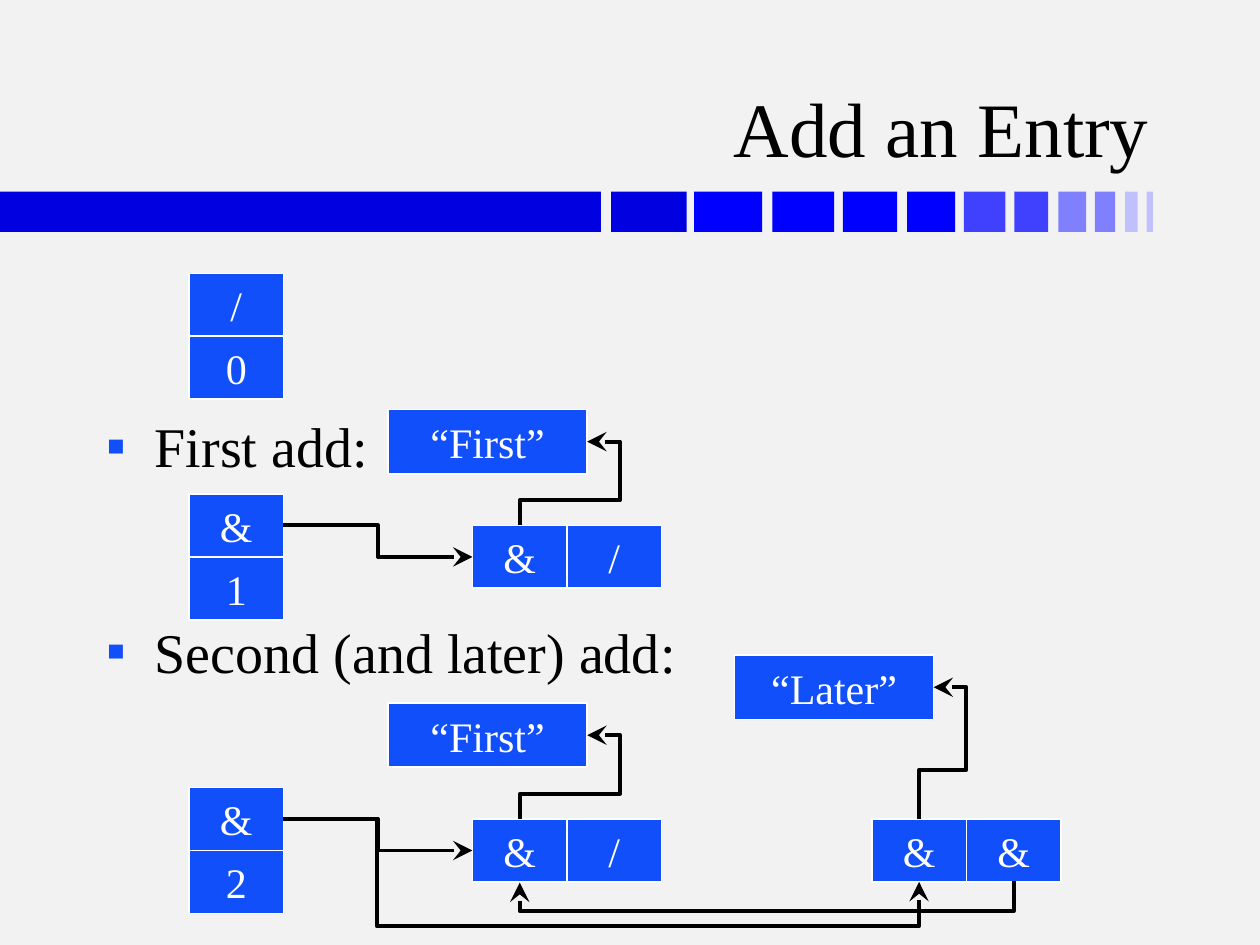
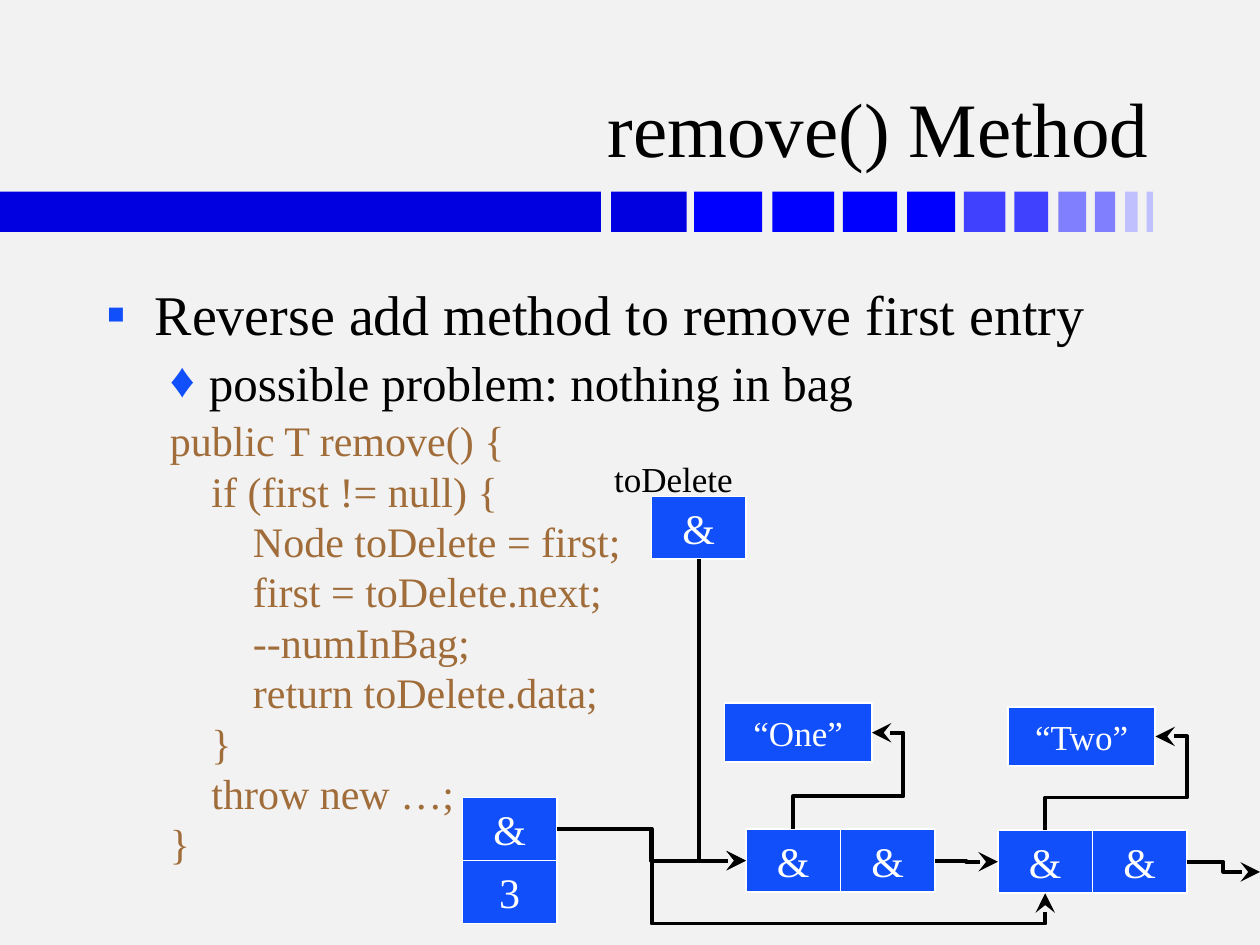
import pptx
import pptx.dml.color
import pptx.enum.shapes
import pptx.enum.text
import pptx.oxml
import pptx.oxml.ns
import pptx.util
from pptx.dml.color import RGBColor
from pptx.util import Inches, Pt

FONT = "Times New Roman"
PAPER = RGBColor(0xF2, 0xF2, 0xF2)
BLACK = RGBColor(0, 0, 0)
WHITE = RGBColor(255, 255, 255)
NODE_BLUE = RGBColor(0x11, 0x4F, 0xFB)
CODE_BROWN = RGBColor(0xA0, 0x6D, 0x3A)
BAND_DARK = RGBColor(0, 0, 0xE0)
BAND_BLUE = RGBColor(0, 0, 0xFF)
BAND_MID = RGBColor(0x40, 0x40, 0xFF)
BAND_LIGHT = RGBColor(0x80, 0x80, 0xFF)
BAND_PALE = RGBColor(0xC0, 0xC0, 0xFF)

BAND_TOP, BAND_HEIGHT = 1.52, 0.32
BANDS = [
    (0, 4.77, BAND_DARK), (4.85, 0.6, BAND_DARK),
    (5.51, 0.54, BAND_BLUE), (6.13, 0.49, BAND_BLUE),
    (6.69, 0.43, BAND_BLUE), (7.2, 0.38, BAND_BLUE),
    (7.65, 0.33, BAND_MID), (8.05, 0.27, BAND_MID),
    (8.4, 0.22, BAND_LIGHT), (8.69, 0.16, BAND_LIGHT),
    (8.93, 0.1, BAND_PALE), (9.1, 0.05, BAND_PALE),
]

CELL_W, CELL_H = 0.75, 0.5
TOP, LEFT, BOTTOM, RIGHT = range(4)

STYLES = {
    "bullet": dict(size=32, color=BLACK, margin=0.38, hang=0.38, before=6.4, after=0, mark="▪"),
    "sub": dict(size=28, color=BLACK, margin=0.81, hang=0.31, before=3, after=2.2, mark="♦"),
    "code": dict(size=24, color=CODE_BROWN, margin=0.5, hang=0, before=0, after=0, mark=None),
}
CODE_STEP = 0.33

ADD = {
    "title": "Add an Entry",
    "texts": [
        (3.22, 0.7, [("bullet", 0, "First add:")]),
        (4.85, 0.7, [("bullet", 0, "Second (and later) add:")]),
    ],
    "stacks": {
        "empty": (1.5, 2.17, "/0"),
        "bag1": (1.5, 3.92, "&1"),
        "bag2": (1.5, 6.25, "&2"),
    },
    "nodes": {
        "node1": (3.75, 4.17, "&/"),
        "node2": (3.75, 6.5, "&/"),
        "later node": (6.92, 6.5, "&&"),
    },
    "data": {
        "first1": (3.08, 3.25, 1.58, 0.51, "“First”", 24),
        "first2": (3.08, 5.58, 1.58, 0.51, "“First”", 24),
        "later": (5.83, 5.2, 1.58, 0.51, "“Later”", 24),
    },
    "arrows": [
        (("node1", 0), TOP, ("first1", 0), RIGHT, [3.97, 4.92]),
        (("bag1", 0), RIGHT, ("node1", 0), LEFT, [3]),
        (("bag2", 0), RIGHT, ("node2", 0), LEFT, [3]),
        (("node2", 0), TOP, ("first2", 0), RIGHT, [6.3, 4.92]),
        (("later node", 0), TOP, ("later", 0), RIGHT, [6.11, 7.67]),
        (("later node", 1), BOTTOM, ("node2", 0), BOTTOM, [7.24]),
        (("bag2", 0), RIGHT, ("later node", 0), BOTTOM, [2.99, 7.35]),
    ],
}

REMOVE = {
    "title": "remove() Method",
    "texts": [
        (2.17, 4.5, [
            ("bullet", 0, "Reverse add method to remove first entry"),
            ("sub", 0, "possible problem: nothing in bag"),
            ("code", 0, "public T remove() {"),
            ("code", 1, "if (first != null) {"),
            ("code", 2, "Node toDelete = first;"),
            ("code", 2, "first = toDelete.next;"),
            ("code", 2, "--numInBag;"),
            ("code", 2, "return toDelete.data;"),
            ("code", 1, "}"),
            ("code", 1, "throw new …;"),
            ("code", 0, "}"),
        ]),
    ],
    "stacks": {"bag": (3.67, 6.33, "&3"), "toDelete": (5.17, 3.94, "&")},
    "nodes": {"node1": (5.92, 6.58, "&&"), "node2": (7.92, 6.59, "&&")},
    "data": {
        "one": (5.75, 5.58, 1.17, 0.47, "“One”", 20),
        "two": (8, 5.61, 1.17, 0.47, "“Two”", 20),
    },
    "arrows": [
        (("bag", 0), RIGHT, ("node1", 0), LEFT, [5.17]),
        (("node1", 0), TOP, ("one", 0), RIGHT, [6.32, 7.17]),
        (("node2", 0), TOP, ("two", 0), RIGHT, [6.33, 9.42]),
        (("node1", 1), RIGHT, ("node2", 0), LEFT, [7.67]),
        (("node2", 1), RIGHT, (10, 6.92), None, [9.71]),
        (("toDelete", 0), BOTTOM, ("node1", 0), LEFT, []),
        (("bag", 0), RIGHT, ("node2", 0), BOTTOM, [5.17, 7.33]),
    ],
}
LABEL = (4.77, 3.58, 1.15, 0.44, "toDelete")


def sub(parent, tag, **attrs):
    el = parent.makeelement(pptx.oxml.ns.qn(tag), attrs)
    parent.append(el)
    return el


def format_runs(p, size, color):
    for r in p.runs:
        r.font.name = FONT
        r.font.size = Pt(size)
        r.font.color.rgb = color


def add_rect(s, x, y, w, h, color):
    sp = s.shapes.add_shape(pptx.enum.shapes.MSO_SHAPE.RECTANGLE,
                            Inches(x), Inches(y), Inches(w), Inches(h))
    sp.shadow.inherit = False
    sp.fill.solid()
    sp.fill.fore_color.rgb = color
    sp.line.fill.background()
    return sp


def add_box(s, x, y, w, h, text, size=24):
    sp = add_rect(s, x, y, w, h, NODE_BLUE)
    sp.line.color.rgb = WHITE
    sp.line.width = Pt(1)
    tf = sp.text_frame
    tf.text = text
    tf.word_wrap = False
    tf.vertical_anchor = pptx.enum.text.MSO_ANCHOR.MIDDLE
    p = tf.paragraphs[0]
    p.alignment = pptx.enum.text.PP_ALIGN.CENTER
    format_runs(p, size, WHITE)
    return sp


def add_text(s, top, height, lines):
    sp = s.shapes.add_textbox(Inches(0.75), Inches(top), Inches(8.5), Inches(height))
    tf = sp.text_frame
    tf.word_wrap = True
    for i, (kind, depth, text) in enumerate(lines):
        style = STYLES[kind]
        p = tf.add_paragraph() if i else tf.paragraphs[0]
        p.text = text
        p.space_before = Pt(style["before"])
        p.space_after = Pt(style["after"])
        format_runs(p, style["size"], style["color"])
        pPr = p._p.get_or_add_pPr()
        pPr.set("marL", str(Inches(style["margin"] + depth * CODE_STEP)))
        pPr.set("indent", str(-Inches(style["hang"])))
        if style["mark"]:
            sub(sub(pPr, "a:buClr"), "a:srgbClr", val=str(NODE_BLUE))
            sub(pPr, "a:buFont", typeface=FONT)
            sub(pPr, "a:buChar", char=style["mark"])
        else:
            sub(pPr, "a:buNone")


def site_point(sp, site):
    fx, fy = {TOP: (0.5, 0), LEFT: (0, 0.5), BOTTOM: (0.5, 1), RIGHT: (1, 0.5)}[site]
    return sp.left + sp.width * fx, sp.top + sp.height * fy


def add_arrow(s, boxes, source, source_site, target, target_site, bends):
    start = boxes[source]
    x1, y1 = site_point(start, source_site)
    if target_site is None:
        x2, y2 = (Inches(v) for v in target)
    else:
        x2, y2 = site_point(boxes[target], target_site)
    cx = s.shapes.add_connector(pptx.enum.shapes.MSO_CONNECTOR.ELBOW,
                                int(x1), int(y1), int(x2), int(y2))
    cx.begin_connect(start, source_site)
    if target_site is not None:
        cx.end_connect(boxes[target], target_site)

    vertical = source_site in (TOP, BOTTOM)
    along, across = (y2 - y1, x1 - x2) if vertical else (x2 - x1, y2 - y1)
    along = along or Inches(0.01)
    cx.width, cx.height = int(abs(along)), int(abs(across))
    cx.left = int((x1 + x2 - cx.width) / 2)
    cx.top = int((y1 + y2 - cx.height) / 2)
    xfrm = cx._element.spPr.xfrm
    xfrm.rot = 90 if vertical else 0
    xfrm.flipH, xfrm.flipV = along < 0, across < 0

    origins = (y1, x1) if vertical else (x1, y1)
    spans = (along, -across if vertical else across)
    geom = cx._element.spPr.find(pptx.oxml.ns.qn("a:prstGeom"))
    geom.set("prst", f"bentConnector{len(bends) + 2}")
    guides = geom.find(pptx.oxml.ns.qn("a:avLst"))
    if guides is None:
        guides = sub(geom, "a:avLst")
    for i, (bend, origin, span) in enumerate(zip(bends, origins, spans), 1):
        ratio = round((Inches(bend) - origin) / span * 100000)
        sub(guides, "a:gd", name=f"adj{i}", fmla=f"val {ratio}")

    cx.line.color.rgb = BLACK
    cx.line.width = Pt(2.25)
    sub(cx.line._get_or_add_ln(), "a:tailEnd", type="stealth", w="lg", len="lg")
    sub(cx._element.spPr, "a:effectLst")


def add_slide(prs, content):
    s = prs.slides.add_slide(prs.slide_layouts[5])
    for x, w, color in BANDS:
        add_rect(s, x, BAND_TOP, w, BAND_HEIGHT, color)
    title = s.shapes.title
    title.left, title.top, title.width, title.height = (
        Inches(v) for v in (0.74, 0.19, 8.48, 1.23))
    tf = title.text_frame
    tf.text = content["title"]
    tf.vertical_anchor = pptx.enum.text.MSO_ANCHOR.BOTTOM
    tf.paragraphs[0].alignment = pptx.enum.text.PP_ALIGN.RIGHT
    format_runs(tf.paragraphs[0], 44, BLACK)
    for text in content["texts"]:
        add_text(s, *text)

    boxes = {}
    for group, dx, dy in (("stacks", 0, CELL_H), ("nodes", CELL_W, 0)):
        for name, (x, y, cells) in content[group].items():
            for i, cell in enumerate(cells):
                boxes[name, i] = add_box(s, x + i * dx, y + i * dy, CELL_W, CELL_H, cell)
    for name, box in content["data"].items():
        boxes[name, 0] = add_box(s, *box)
    for arrow in content["arrows"]:
        add_arrow(s, boxes, *arrow)
    return s


def add_label(s, x, y, w, h, text):
    tf = s.shapes.add_textbox(Inches(x), Inches(y), Inches(w), Inches(h)).text_frame
    tf.text = text
    tf.word_wrap = False
    tf.paragraphs[0].alignment = pptx.enum.text.PP_ALIGN.CENTER
    format_runs(tf.paragraphs[0], 20, BLACK)


def main():
    prs = pptx.Presentation()
    prs.slide_width, prs.slide_height = Inches(10), Inches(7.5)
    fill = prs.slide_master.background.fill
    fill.solid()
    fill.fore_color.rgb = PAPER
    add_slide(prs, ADD)
    add_label(add_slide(prs, REMOVE), *LABEL)
    prs.save("out.pptx")


if __name__ == "__main__":
    main()
